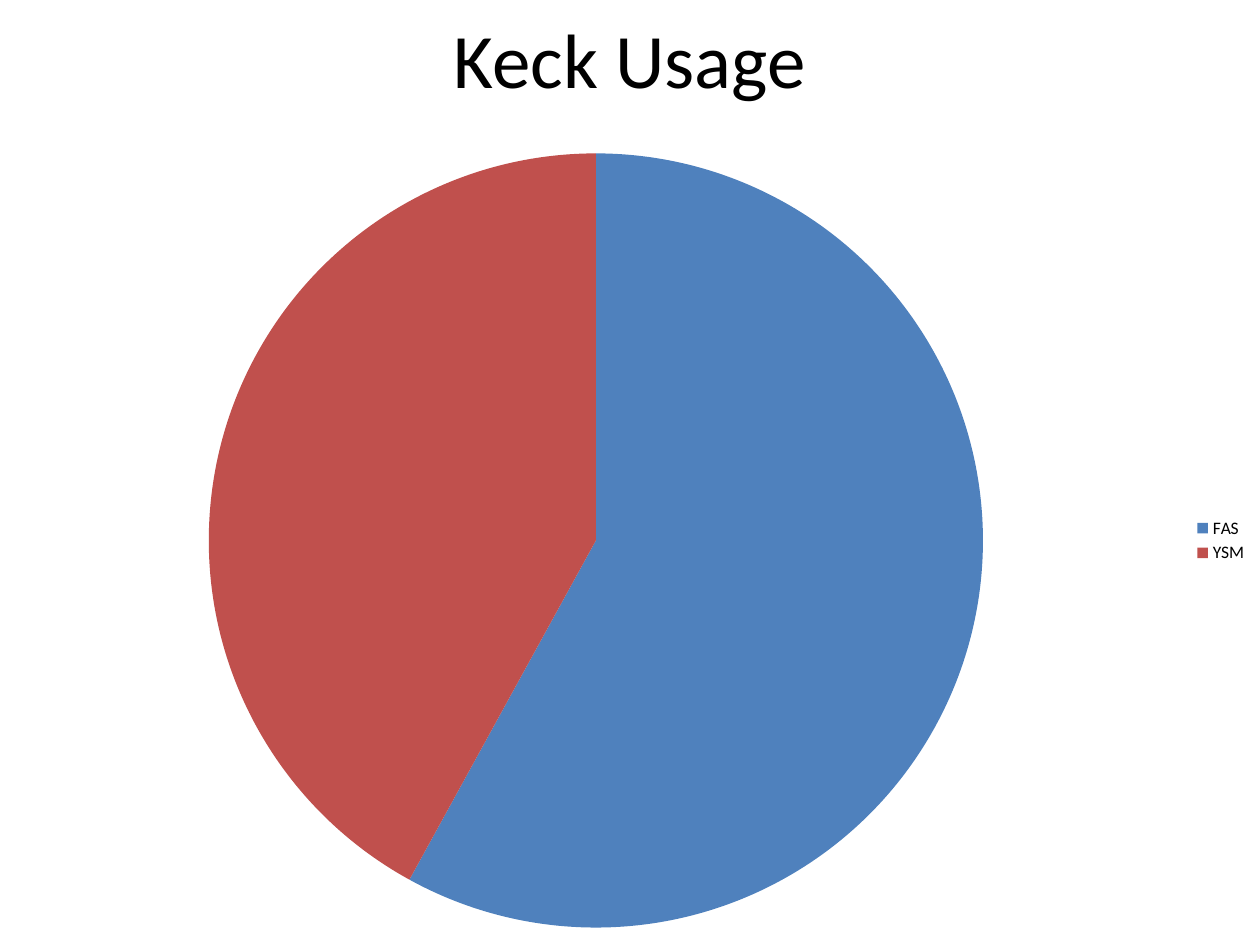
from pptx import Presentation
from pptx.chart.data import CategoryChartData
from pptx.dml.color import RGBColor
from pptx.enum.chart import XL_CHART_TYPE, XL_LEGEND_POSITION
from pptx.enum.text import MSO_ANCHOR, PP_ALIGN
from pptx.util import Emu, Pt

EMU_PER_PX = 914400 // 126
SLIDE_WIDTH, SLIDE_HEIGHT = 1260, 945
CHART_TOP = 136

FONT = "Calibri"
BLACK = RGBColor(0x00, 0x00, 0x00)
BLUE = RGBColor(0x4F, 0x81, 0xBD)
RED = RGBColor(0xC0, 0x50, 0x4D)

USAGE = [("FAS", 58, BLUE), ("YSM", 42, RED)]


def px(*lengths):
    return [Emu(length * EMU_PER_PX) for length in lengths]


def style_font(font, size, color=BLACK):
    font.name = FONT
    font.size = Pt(size)
    font.color.rgb = color


def add_text(slide, text, box, size, color=BLACK, align=PP_ALIGN.CENTER,
             anchor=MSO_ANCHOR.MIDDLE):
    frame = slide.shapes.add_textbox(*px(*box)).text_frame
    frame.word_wrap = True
    frame.vertical_anchor = anchor
    paragraph = frame.paragraphs[0]
    paragraph.alignment = align
    run = paragraph.add_run()
    run.text = text
    style_font(run.font, size, color)


def add_pie(slide, shares, box, size):
    """Draw a pie with a legend from (label, value, color) rows."""
    labels, values, colors = zip(*shares)
    data = CategoryChartData()
    data.categories = labels
    data.add_series("Series 1", values)
    pie = slide.shapes.add_chart(XL_CHART_TYPE.PIE, *px(*box), data).chart
    style_font(pie.font, size)
    pie.has_title = False
    pie.has_legend = True
    pie.legend.position = XL_LEGEND_POSITION.RIGHT
    pie.legend.include_in_layout = False
    plot = pie.plots[0]
    plot.vary_by_categories = True
    for index, color in enumerate(colors):
        fill = plot.series[0].points[index].format.fill
        fill.solid()
        fill.fore_color.rgb = color


def main():
    presentation = Presentation()
    presentation.slide_width, presentation.slide_height = px(
        SLIDE_WIDTH, SLIDE_HEIGHT)
    slide = presentation.slides.add_slide(presentation.slide_layouts[6])
    add_text(slide, "Keck Usage", (63, -21, 1134, 158), size=44)
    add_pie(slide, USAGE,
            (0, CHART_TOP, SLIDE_WIDTH, SLIDE_HEIGHT - CHART_TOP), size=10)
    presentation.save("out.pptx")


if __name__ == "__main__":
    main()
